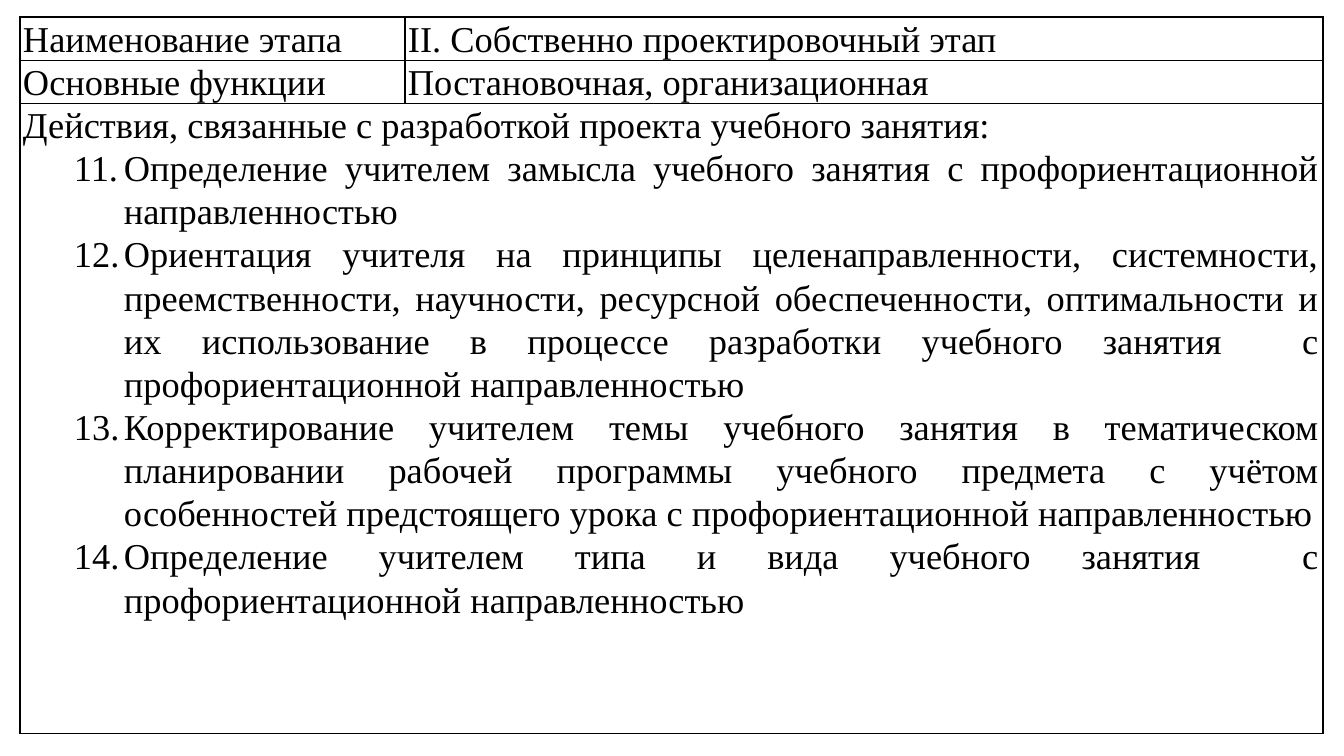
from lxml import etree
from pptx import Presentation
from pptx.dml.color import RGBColor
from pptx.enum.text import PP_ALIGN
from pptx.oxml.ns import qn
from pptx.util import Pt

JUSTIFY = PP_ALIGN.JUSTIFY
BLACK = "000000"
COLUMN_WIDTHS = [385, 918]
ROW_HEIGHTS = [24, 24, 630]
HEADER = [
    ["Наименование этапа", "II. Собственно проектировочный этап"],
    ["Основные функции", "Постановочная, организационная"],
]
INTRO = "Действия, связанные с разработкой проекта учебного занятия:"
ACTIONS = [
    "Определение учителем замысла учебного занятия с профориентационной направленностью",
    "Ориентация учителя на принципы целенаправленности, системности, преемственности, "
    "научности, ресурсной обеспеченности, оптимальности и их использование в процессе "
    "разработки учебного занятия  с профориентационной направленностью",
    "Корректирование учителем темы учебного занятия в тематическом планировании рабочей "
    "программы учебного предмета с учётом особенностей предстоящего урока "
    "с профориентационной направленностью",
    "Определение учителем типа и вида учебного занятия  с профориентационной направленностью",
]


def px(n):
    """Turn pixels, 100.8 to the inch, into EMU."""
    return round(n * 914400 / 100.8)


def add(parent, tag, **attributes):
    """Append an XML child element with the given attributes."""
    child = etree.SubElement(parent, qn(tag))
    for name, value in attributes.items():
        child.set(name, str(value))
    return child


prs = Presentation()
prs.slide_width, prs.slide_height = px(1344), px(756)
s = prs.slides.add_slide(prs.slide_layouts[6])

table = s.shapes.add_table(3, 2, px(20), px(17), px(sum(COLUMN_WIDTHS)),
                           px(sum(ROW_HEIGHTS))).table
table.first_row = False
table.horz_banding = False
for column, width in zip(table.columns, COLUMN_WIDTHS):
    column.width = px(width)
for row, height in zip(table.rows, ROW_HEIGHTS):
    row.height = px(height)

# Text
for i, texts in enumerate(HEADER):
    for j, text in enumerate(texts):
        table.cell(i, j).text_frame.text = text

actions_cell = table.cell(2, 0)
actions_cell.merge(table.cell(2, 1))
tf = actions_cell.text_frame
tf.text = INTRO
for action in ACTIONS:
    p = tf.add_paragraph()
    p.text = action
    p.level = 1
    p.alignment = JUSTIFY
    pPr = p._p.get_or_add_pPr()
    pPr.set("marL", str(px(101)))
    pPr.set("indent", str(px(-50)))
    add(pPr, "a:buFont", typeface="+mj-lt")
    add(pPr, "a:buAutoNum", type="arabicPeriod", startAt=11)
    add(add(pPr, "a:tabLst"), "a:tab", pos=px(51), algn="l")

# Cell format
for cell in table.iter_cells():
    cell.margin_left = cell.margin_right = px(3)
    cell.margin_top = cell.margin_bottom = 0
    tcPr = cell._tc.get_or_add_tcPr()
    for side in ("a:lnL", "a:lnR", "a:lnT", "a:lnB"):
        line = add(tcPr, side, w=Pt(1))
        add(add(line, "a:solidFill"), "a:srgbClr", val=BLACK)
    cell.fill.background()
    for p in cell.text_frame.paragraphs:
        p.line_spacing = 1.07
        for r in p.runs:
            r.font.name = "Times New Roman"
            r.font.size = Pt(26)
            r.font.color.rgb = RGBColor.from_string(BLACK)

prs.save("out.pptx")
